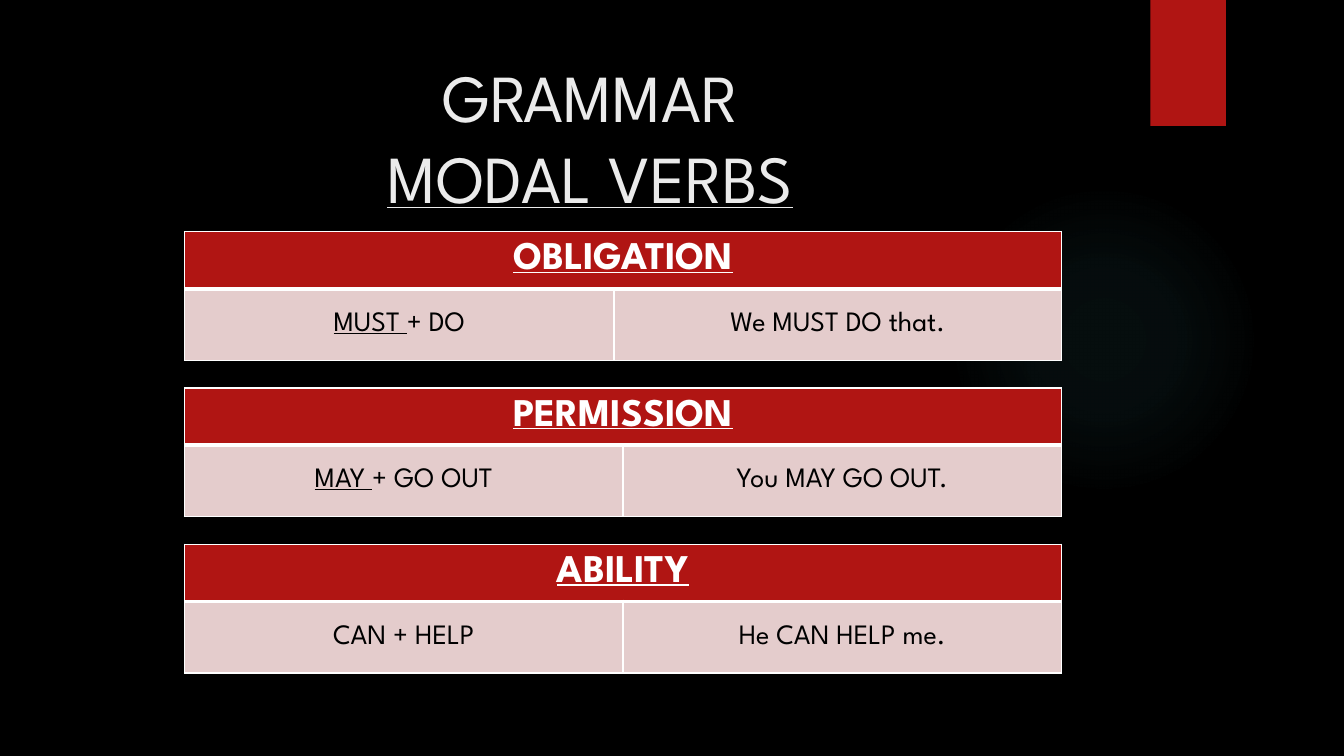
from lxml.etree import SubElement
from pptx import Presentation
from pptx.dml.color import RGBColor
from pptx.enum.shapes import MSO_SHAPE
from pptx.enum.text import MSO_ANCHOR, PP_ALIGN
from pptx.oxml import parse_xml
from pptx.oxml.ns import nsdecls, qn
from pptx.util import Inches, Pt

BLACK = RGBColor(0x00, 0x00, 0x00)
WHITE = RGBColor(0xFF, 0xFF, 0xFF)
PALE = RGBColor(0xEB, 0xEB, 0xEB)
RED = RGBColor(0xB0, 0x15, 0x13)
PINK = RGBColor(0xE4, 0xCC, 0xCC)
TEAL = RGBColor(0x50, 0xB9, 0xC1)
FONT = "League Spartan"
GLOW = ((0, 7), (36, 6), (69, 0))
LEFT, WIDTH = 1.83, 8.7
TOP, STEP = 2.3, 1.55
RULES = (
    ("OBLIGATION", "MUST ", "+ DO", "We MUST DO that.", 0.54, 4.26),
    ("PERMISSION", "MAY ", "+ GO OUT", "You MAY GO OUT.", 0.45, 4.35),
    ("ABILITY", "", "CAN + HELP", "He CAN HELP me.", 0.45, 4.35),
)


def style(para, size, color, bold=False):
    """Centre a paragraph and set its font."""
    para.alignment = PP_ALIGN.CENTER
    font = para.font
    font.name, font.size, font.bold = FONT, Pt(size), bold
    font.color.rgb = color


def add_run(para, text, under=False):
    """Append a run, underlined if asked."""
    run = para.add_run()
    run.text = text
    run.font.underline = under


def add_form(slide, kind, box):
    """Place a plain shape without line or shadow."""
    form = slide.shapes.add_shape(kind, *map(Inches, box))
    form.shadow.inherit = False
    form.line.fill.background()
    return form


def add_decor(slide):
    """Draw the soft glow and the red ribbon."""
    glow = add_form(slide, MSO_SHAPE.OVAL, (9.41, 1.83, 3.08, 3.08))
    stops = "".join(
        f'<a:gs pos="{pos * 1000}"><a:srgbClr val="{TEAL}">'
        f'<a:alpha val="{alpha * 1000}"/></a:srgbClr></a:gs>'
        for pos, alpha in GLOW)
    grad = parse_xml(
        f'<a:gradFill {nsdecls("a")}><a:gsLst>{stops}</a:gsLst>'
        '<a:path path="circle"><a:fillToRect l="50000" t="50000" '
        'r="50000" b="50000"/></a:path></a:gradFill>')
    glow.element.spPr.find(qn("a:prstGeom")).addnext(grad)
    ribbon = add_form(slide, MSO_SHAPE.RECTANGLE, (11.41, 0, 0.75, 1.25))
    ribbon.fill.solid()
    ribbon.fill.fore_color.rgb = RED


def add_title(slide, box):
    """Write the two-line heading."""
    frame = slide.shapes.add_textbox(*map(Inches, box)).text_frame
    frame.word_wrap = True
    frame.vertical_anchor = MSO_ANCHOR.TOP
    para = frame.paragraphs[0]
    style(para, 48, PALE)
    para.line_spacing = Pt(57.6)
    add_run(para, "GRAMMAR")
    para.add_line_break()
    add_run(para, "MODAL VERBS", True)


def paint(cell, fill, top, base):
    """Fill a cell and rule its four edges in white."""
    cell.vertical_anchor = MSO_ANCHOR.MIDDLE
    cell.fill.solid()
    cell.fill.fore_color.rgb = fill
    props = cell._tc.get_or_add_tcPr()
    edges = (("lnL", 1), ("lnR", 1), ("lnT", top), ("lnB", base))
    for spot, (tag, width) in enumerate(edges):
        line = SubElement(props, qn(f"a:{tag}"), w=str(Pt(width)))
        paint_el = SubElement(line, qn("a:solidFill"))
        SubElement(paint_el, qn("a:srgbClr"), val=str(WHITE))
        props.insert(spot, line)


def add_rule(slide, top, rule):
    """Build one table: a merged heading over a form and an example."""
    head, verb, rest, sample, high, split = rule
    heights, widths = (high, 0.71), (split, WIDTH - split)
    table = slide.shapes.add_table(
        2, 2, *map(Inches, (LEFT, top, WIDTH, sum(heights)))).table
    table.first_row = table.horz_banding = False
    for row, height in zip(table.rows, heights):
        row.height = Inches(height)
    for col, width in zip(table.columns, widths):
        col.width = Inches(width)
    for cell in table.rows[0].cells:
        paint(cell, RED, 1, 3)
    for cell in table.rows[1].cells:
        paint(cell, PINK, 3, 1)
    table.cell(0, 0).merge(table.cell(0, 1))
    title, form, case = (
        table.cell(*spot).text_frame.paragraphs[0]
        for spot in ((0, 0), (1, 0), (1, 1)))
    style(title, 28, WHITE, True)
    add_run(title, head, True)
    style(form, 20, BLACK)
    if verb:
        add_run(form, verb, True)
    add_run(form, rest)
    style(case, 20, BLACK)
    add_run(case, sample)


def main():
    """Build the slide and save it."""
    deck = Presentation()
    deck.slide_width, deck.slide_height = Inches(13.33), Inches(7.5)
    slide = deck.slides.add_slide(deck.slide_layouts[6])
    slide.background.fill.solid()
    slide.background.fill.fore_color.rgb = BLACK
    add_decor(slide)
    add_title(slide, (0.71, 0.5, 10.29, 1.53))
    for index, rule in enumerate(RULES):
        add_rule(slide, TOP + index * STEP, rule)
    deck.save("out.pptx")


if __name__ == "__main__":
    main()
